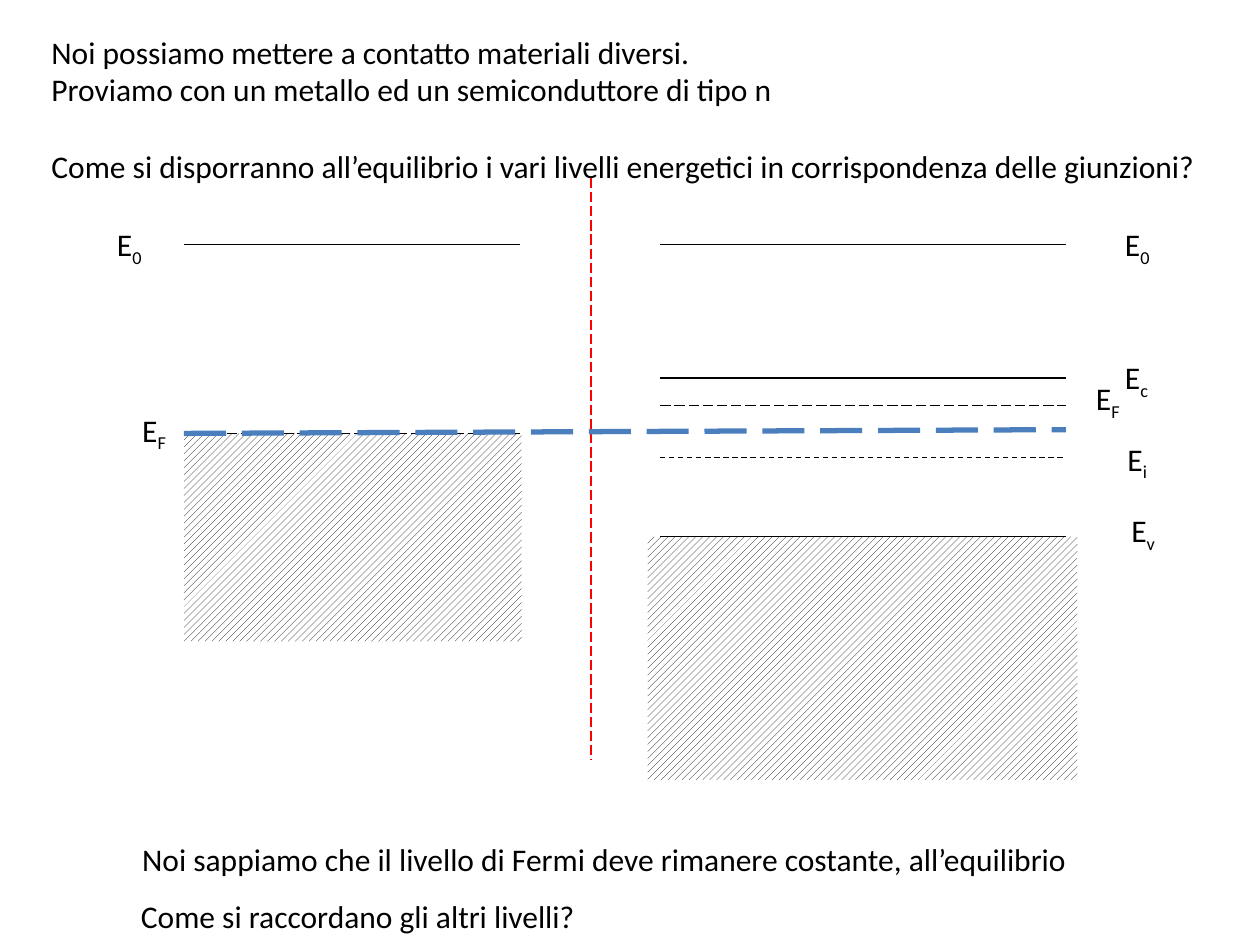
from lxml.etree import SubElement
from pptx import Presentation
from pptx.dml.color import RGBColor
from pptx.enum.dml import MSO_LINE, MSO_PATTERN
from pptx.enum.shapes import MSO_CONNECTOR, MSO_SHAPE
from pptx.enum.text import MSO_AUTO_SIZE
from pptx.oxml.ns import qn
from pptx.util import Inches, Pt

BLACK, WHITE, RED, BLUE = "000000", "FFFFFF", "FF0000", "4B7EBC"
METAL_LEFT, METAL_RIGHT = 1.46, 4.13
SEMI_LEFT, SEMI_RIGHT = 5.24, 8.46
VACUUM, METAL_FERMI = 1.94, 3.44
CONDUCTION, SEMI_FERMI, INTRINSIC, VALENCE = 3, 3.22, 3.63, 4.26


def color(value):
    """Turn a hex string into a colour."""
    return RGBColor.from_string(value)


def style_span(span):
    """Apply the common text font."""
    span.font.name = "Calibri"
    span.font.size = Pt(18)
    span.font.color.rgb = color(BLACK)


def add_text(shapes, left, top, width, height, lines):
    """Add an unwrapped text box with one paragraph per line."""
    box = shapes.add_textbox(Inches(left), Inches(top), Inches(width), Inches(height))
    frame = box.text_frame
    frame.word_wrap = False
    frame.auto_size = MSO_AUTO_SIZE.SHAPE_TO_FIT_TEXT
    frame.text = "\n".join(lines)
    for para in frame.paragraphs:
        for span in para.runs:
            style_span(span)
    return frame


def add_level_label(shapes, left, top, width, subscript):
    """Add an energy symbol with its subscript."""
    frame = add_text(shapes, left, top, width, 0.4, ["E"])
    span = frame.paragraphs[0].add_run()
    span.text = subscript
    style_span(span)
    span._r.get_or_add_rPr().set("baseline", "-25000")


def add_line(shapes, start, end, dash=None, stroke=BLACK, width=0.75):
    """Add a straight line without shadow."""
    points = [Inches(value) for value in (*start, *end)]
    line = shapes.add_connector(MSO_CONNECTOR.STRAIGHT, *points)
    line.line.color.rgb = color(stroke)
    line.line.width = Pt(width)
    if dash is not None:
        line.line.dash_style = dash
    SubElement(line._element.spPr, qn("a:effectLst"))


def add_filled_band(shapes, left, top, width, height):
    """Add a hatched block of occupied states."""
    band = shapes.add_shape(
        MSO_SHAPE.RECTANGLE, Inches(left), Inches(top), Inches(width), Inches(height)
    )
    band.shadow.inherit = False
    band.fill.patterned()
    band.fill.pattern = MSO_PATTERN.WIDE_UPWARD_DIAGONAL
    band.fill.fore_color.rgb = color(BLACK)
    band.fill.back_color.rgb = color(WHITE)
    band.line.fill.background()


def add_metal(page):
    """Add the grouped band diagram of the metal."""
    shapes = page.shapes.add_group_shape().shapes
    add_line(shapes, (METAL_LEFT, VACUUM), (METAL_RIGHT, VACUUM))
    add_filled_band(shapes, METAL_LEFT, METAL_FERMI, 2.68, 1.65)
    add_line(shapes, (METAL_LEFT, METAL_FERMI), (METAL_RIGHT, METAL_FERMI), MSO_LINE.LONG_DASH)
    add_level_label(shapes, 0.83, 1.74, 0.41, "0")
    add_level_label(shapes, 1.03, 3.21, 0.4, "F")


def add_semiconductor(page):
    """Add the grouped band diagram of the n-type semiconductor."""
    shapes = page.shapes.add_group_shape().shapes
    add_filled_band(shapes, 5.14, VALENCE, 3.41, 1.93)
    for height, dash in (
        (VACUUM, None),
        (CONDUCTION, None),
        (VALENCE, None),
        (INTRINSIC, MSO_LINE.DASH),
        (SEMI_FERMI, MSO_LINE.LONG_DASH),
    ):
        add_line(shapes, (SEMI_LEFT, height), (SEMI_RIGHT, height), dash)
    for left, top, width, subscript in (
        (8.83, 1.74, 0.41, "0"),
        (8.83, 2.79, 0.39, "c"),
        (8.6, 2.96, 0.4, "F"),
        (8.85, 3.44, 0.36, "i"),
        (8.88, 4.01, 0.39, "v"),
    ):
        add_level_label(shapes, left, top, width, subscript)


def main():
    """Build the slide on the metal-semiconductor junction."""
    deck = Presentation()
    deck.slide_width, deck.slide_height = Inches(10), Inches(7.5)
    page = deck.slides.add_slide(deck.slide_layouts[6])
    shapes = page.shapes
    intro = add_text(shapes, 0.31, 0.21, 9.45, 1.31, [
        "Noi possiamo mettere a contatto materiali diversi.",
        "Proviamo con un metallo ed un semiconduttore di tipo n",
        "Come si disporranno all’equilibrio i vari livelli energetici in corrispondenza delle giunzioni?",
    ])
    intro.paragraphs[-1].space_before = Pt(22)
    add_text(shapes, 1.03, 6.62, 7.63, 0.4, [
        "Noi sappiamo che il livello di Fermi deve rimanere costante, all’equilibrio",
    ])
    add_metal(page)
    add_semiconductor(page)
    add_line(shapes, (4.69, 1.41), (4.69, 6.03), MSO_LINE.LONG_DASH, RED)
    add_line(shapes, (METAL_LEFT, METAL_FERMI), (SEMI_RIGHT, 3.41), MSO_LINE.LONG_DASH, BLUE, 3)
    add_text(shapes, 1.02, 7.07, 3.68, 0.4, ["Come si raccordano gli altri livelli?"])
    deck.save("out.pptx")


if __name__ == "__main__":
    main()
